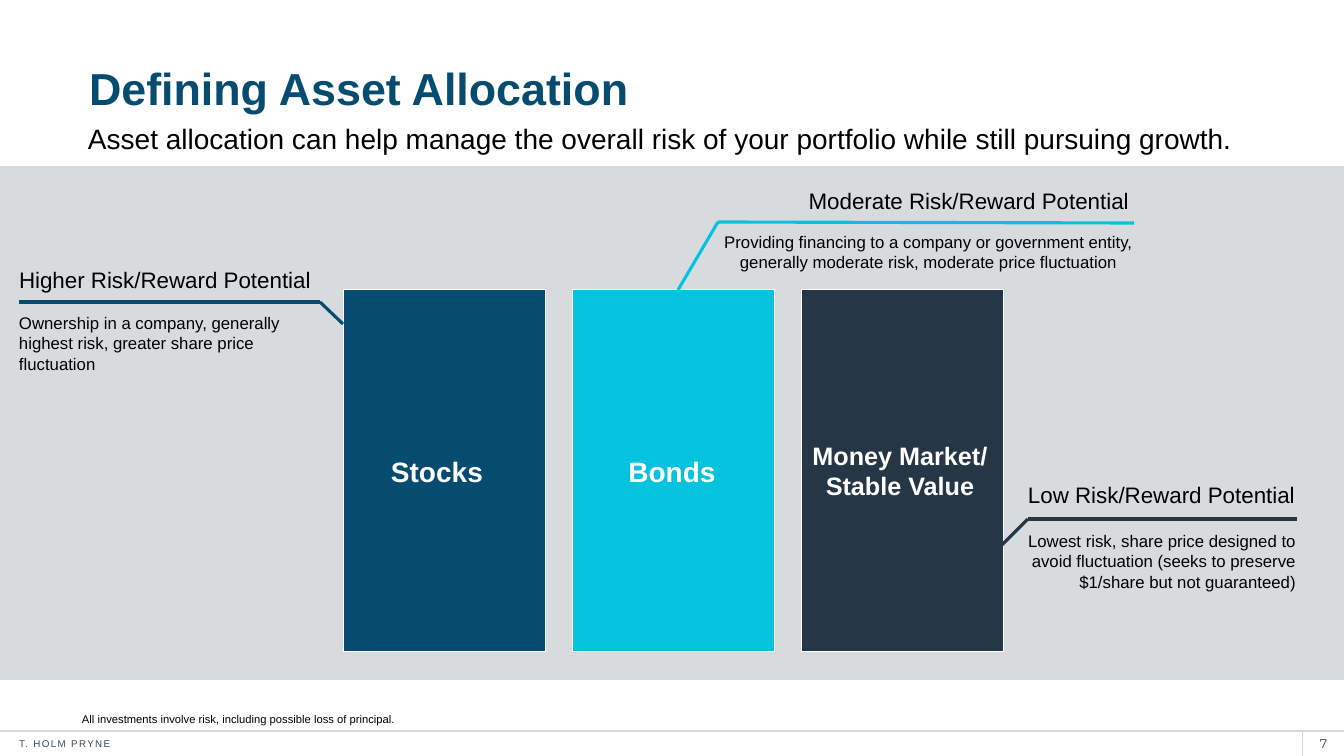
"""Build the asset allocation slide: three asset classes with risk callouts."""
from dataclasses import dataclass

from lxml import etree
from pptx import Presentation
from pptx.chart.data import CategoryChartData
from pptx.dml.color import RGBColor
from pptx.enum.chart import XL_CHART_TYPE
from pptx.enum.shapes import MSO_CONNECTOR, MSO_SHAPE
from pptx.enum.text import MSO_ANCHOR, PP_ALIGN
from pptx.oxml.ns import qn
from pptx.util import Pt

COLUMNS = XL_CHART_TYPE.COLUMN_CLUSTERED
STRAIGHT = MSO_CONNECTOR.STRAIGHT
RECTANGLE = MSO_SHAPE.RECTANGLE
TOP, MIDDLE, BOTTOM = MSO_ANCHOR.TOP, MSO_ANCHOR.MIDDLE, MSO_ANCHOR.BOTTOM
LEFT, CENTER, RIGHT = PP_ALIGN.LEFT, PP_ALIGN.CENTER, PP_ALIGN.RIGHT
PX = 914400 / 100.8


@dataclass(frozen=True)
class Theme:
    font: str = "Arial"
    number_font: str = "Montserrat"
    navy: str = "054C70"
    cyan: str = "05C3DE"
    slate: str = "253746"
    footer: str = "3B4B59"
    rule: str = "D8D8D8"
    band: str = "A8AFB5"
    black: str = "000000"
    white: str = "FFFFFF"
    title_size: int = 32
    subtitle_size: int = 20
    bar_size: int = 20
    long_bar_size: int = 18
    heading_size: int = 16
    detail_size: int = 12
    chart_size: int = 11
    number_size: int = 9
    note_size: int = 8
    footer_size: int = 7


theme = Theme()


def add_text(page, text, place, size, color=theme.black, align=LEFT, anchor=TOP,
             bold=False, font=theme.font, line_spacing=1.0):
    box = page.shapes.add_textbox(*(round(length * PX) for length in place))
    frame = box.text_frame
    frame.word_wrap = True
    frame.vertical_anchor = anchor
    frame.margin_left = frame.margin_right = frame.margin_top = frame.margin_bottom = 0
    para = frame.paragraphs[0]
    para.alignment = align
    para.line_spacing = line_spacing
    span = para.add_run()
    span.text = text
    span.font.name = font
    span.font.size = Pt(size)
    span.font.bold = bold
    span.font.color.rgb = RGBColor.from_string(color)
    return span


def add_line(page, start, end, color, width):
    line = page.shapes.add_connector(STRAIGHT, *(round(length * PX) for length in start + end))
    line.line.color.rgb = RGBColor.from_string(color)
    line.line.width = Pt(width)
    etree.SubElement(line._element.spPr, qn("a:effectLst"))


deck = Presentation()
deck.slide_width = round(1344 * PX)
deck.slide_height = round(756 * PX)
page = deck.slides.add_slide(deck.slide_layouts[6])

add_text(page, "7", (1303, 731, 41, 25), theme.number_size, theme.footer,
         CENTER, MIDDLE, font=theme.number_font)
footer = add_text(page, "T. HOLM PRYNE", (19, 738, 350, 12), theme.footer_size,
                  theme.footer, anchor=BOTTOM)
footer._r.get_or_add_rPr().set("spc", "100")
add_line(page, (0, 731), (1344, 731), theme.rule, 0.75)
add_line(page, (1303, 731), (1303, 756), theme.rule, 0.75)

band = page.shapes.add_shape(RECTANGLE, 0, round(166 * PX), deck.slide_width, round(514 * PX))
band.shadow.inherit = False
band.fill.solid()
band.fill.fore_color.rgb = RGBColor.from_string(theme.band)
band.line.fill.background()
band_color = band._element.spPr.find(qn("a:solidFill"))[0]
etree.SubElement(band_color, qn("a:alpha")).set("val", "44000")

add_text(page, "Defining Asset Allocation", (89, 33, 1167, 82), theme.title_size,
         theme.navy, anchor=BOTTOM, bold=True, line_spacing=0.85)
add_text(page, "Asset allocation can help manage the overall risk of your portfolio "
         "while still pursuing growth.", (88, 120, 1167, 45), theme.subtitle_size,
         line_spacing=1.05)
add_text(page, "All investments involve risk, including possible loss of principal.",
         (82, 675, 1147, 51), theme.note_size, anchor=BOTTOM)

chart_data = CategoryChartData()
chart_data.categories = ["1", "2", "3"]
chart_data.add_series("Series 1", (100, 100, 100))
chart_place = (round(length * PX) for length in (330, 268, 734, 389))
chart = page.shapes.add_chart(COLUMNS, *chart_place, chart_data).chart
chart.has_legend = False
chart.has_title = False
chart.font.name = theme.font
chart.font.size = Pt(theme.chart_size)
chart.font.color.rgb = RGBColor.from_string(theme.footer)
chart.value_axis.minimum_scale = 0
chart.value_axis.maximum_scale = 106
chart.value_axis.has_major_gridlines = False
chart.value_axis.visible = False
chart.category_axis.visible = False

plot = chart.plots[0]
plot.gap_width = 13
plot.vary_by_categories = False
for index, color in enumerate((theme.navy, theme.cyan, theme.slate)):
    bar = plot.series[0].points[index].format
    bar.fill.solid()
    bar.fill.fore_color.rgb = RGBColor.from_string(color)
    bar.line.color.rgb = RGBColor.from_string(theme.white)
    bar.line.width = Pt(0.75)

plot_area = chart._chartSpace.chart.plotArea
for old_layout in plot_area.findall(qn("c:layout")):
    plot_area.remove(old_layout)
layout = etree.Element(qn("c:layout"))
plot_area.insert(0, layout)
manual = etree.SubElement(layout, qn("c:manualLayout"))
for tag, value in (("layoutTarget", "inner"), ("xMode", "edge"), ("yMode", "edge"),
                   ("x", "0"), ("y", "0"), ("w", "0.936"), ("h", "0.985")):
    etree.SubElement(manual, qn(f"c:{tag}")).set("val", value)

bar_labels = [
    ("Stocks", (337, 454, 200, 34), theme.bar_size),
    ("Bonds", (572, 454, 200, 34), theme.bar_size),
    ("Money Market/ Stable Value", (800, 440, 200, 61), theme.long_bar_size),
]
for label, place, size in bar_labels:
    add_text(page, label, place, size, theme.white, CENTER, bold=True)

callouts = [
    ("Higher Risk/Reward Potential", (19, 266, 318, 27), LEFT,
     "Ownership in a company, generally highest risk, greater share price fluctuation",
     (19, 313, 300, 61), LEFT, theme.navy, [(19, 302), (320, 302), (343, 324)]),
    ("Moderate Risk/Reward Potential", (752, 187, 377, 27), RIGHT,
     "Providing financing to a company or government entity, "
     "generally moderate risk, moderate price fluctuation",
     (723, 232, 411, 40), CENTER, theme.cyan, [(678, 290), (718, 222), (1134, 223)]),
    ("Low Risk/Reward Potential", (1028, 481, 300, 27), LEFT,
     "Lowest risk, share price designed to avoid fluctuation "
     "(seeks to preserve $1/share but not guaranteed)",
     (1028, 531, 268, 61), RIGHT, theme.slate, [(1002, 545), (1028, 519), (1297, 519)]),
]
for heading, heading_place, heading_align, detail, detail_place, detail_align, color, corners in callouts:
    add_text(page, heading, heading_place, theme.heading_size, align=heading_align)
    add_text(page, detail, detail_place, theme.detail_size, align=detail_align)
    for start, end in zip(corners, corners[1:]):
        add_line(page, start, end, color, 2.25)

deck.save("out.pptx")
